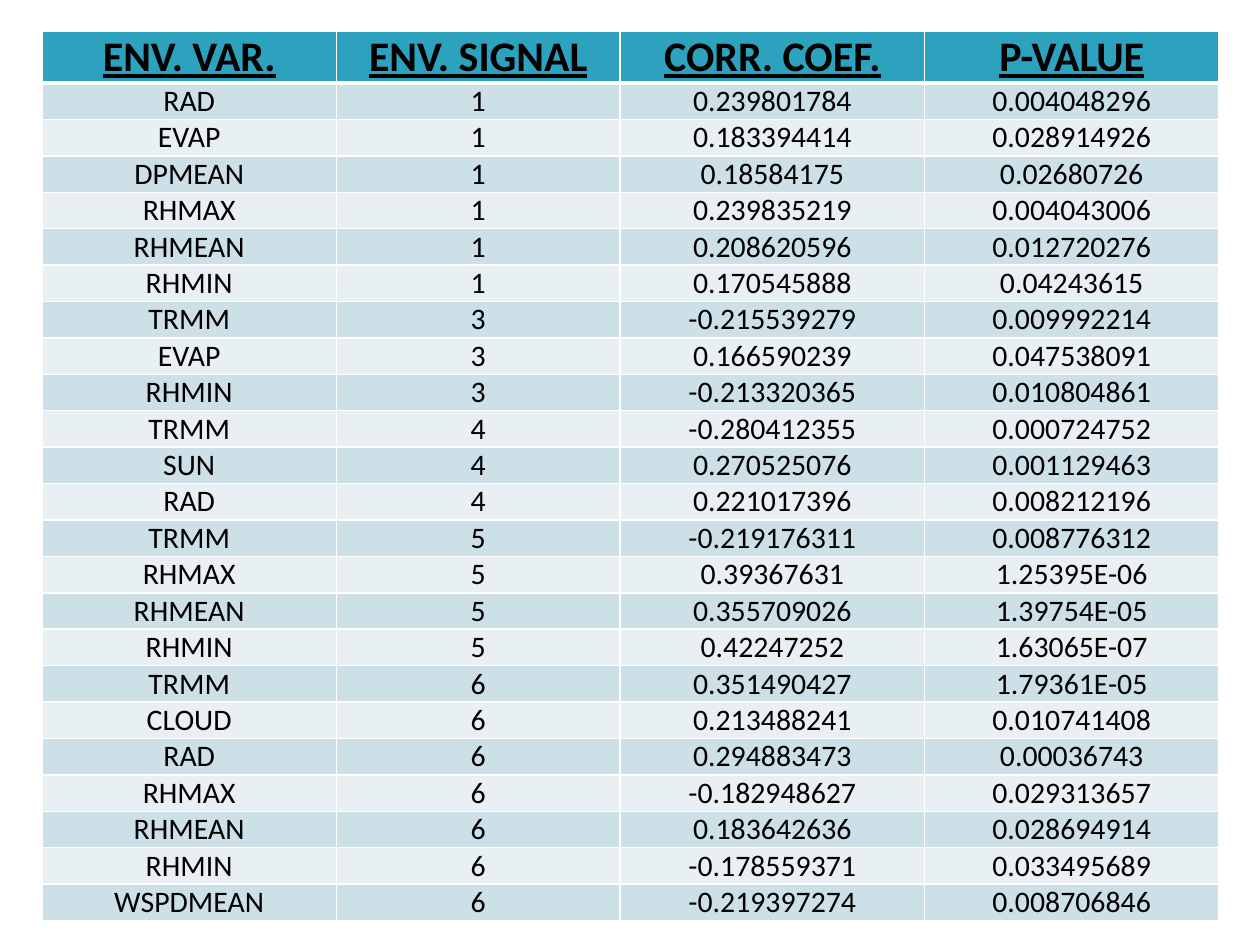
from typing import NamedTuple

from lxml.etree import SubElement
from pptx import Presentation
from pptx.dml.color import RGBColor
from pptx.enum.text import MSO_ANCHOR, PP_ALIGN
from pptx.oxml.ns import qn
from pptx.table import _Cell
from pptx.util import Cm, Pt

COLORS = {
    "header": "2DA2BF",
    "odd_row": "CDE0E8",
    "even_row": "E8F0F4",
    "border": "FFFFFF",
    "text": "000000",
}
FONT = "Calibri"
COLUMN_WIDTHS = (5.93, 5.72, 6.14, 5.93)
HEADER_HEIGHT = 0.85
ROW_HEIGHT = 0.72
THIN, THICK = 1, 3


class Correlation(NamedTuple):
    variable: str
    signal: str
    coefficient: str
    p_value: str


HEADINGS = Correlation("ENV. VAR.", "ENV. SIGNAL", "CORR. COEF.", "P-VALUE")
CORRELATIONS = [
    Correlation("RAD", "1", "0.239801784", "0.004048296"),
    Correlation("EVAP", "1", "0.183394414", "0.028914926"),
    Correlation("DPMEAN", "1", "0.18584175", "0.02680726"),
    Correlation("RHMAX", "1", "0.239835219", "0.004043006"),
    Correlation("RHMEAN", "1", "0.208620596", "0.012720276"),
    Correlation("RHMIN", "1", "0.170545888", "0.04243615"),
    Correlation("TRMM", "3", "-0.215539279", "0.009992214"),
    Correlation("EVAP", "3", "0.166590239", "0.047538091"),
    Correlation("RHMIN", "3", "-0.213320365", "0.010804861"),
    Correlation("TRMM", "4", "-0.280412355", "0.000724752"),
    Correlation("SUN", "4", "0.270525076", "0.001129463"),
    Correlation("RAD", "4", "0.221017396", "0.008212196"),
    Correlation("TRMM", "5", "-0.219176311", "0.008776312"),
    Correlation("RHMAX", "5", "0.39367631", "1.25395E-06"),
    Correlation("RHMEAN", "5", "0.355709026", "1.39754E-05"),
    Correlation("RHMIN", "5", "0.42247252", "1.63065E-07"),
    Correlation("TRMM", "6", "0.351490427", "1.79361E-05"),
    Correlation("CLOUD", "6", "0.213488241", "0.010741408"),
    Correlation("RAD", "6", "0.294883473", "0.00036743"),
    Correlation("RHMAX", "6", "-0.182948627", "0.029313657"),
    Correlation("RHMEAN", "6", "0.183642636", "0.028694914"),
    Correlation("RHMIN", "6", "-0.178559371", "0.033495689"),
    Correlation("WSPDMEAN", "6", "-0.219397274", "0.008706846"),
]


def write_text(cell: _Cell, text: str, *, size: float, bold: bool = False,
               underline: bool = False) -> None:
    cell.margin_left = cell.margin_right = cell.margin_top = cell.margin_bottom = 0
    cell.vertical_anchor = MSO_ANCHOR.BOTTOM
    paragraph = cell.text_frame.paragraphs[0]
    paragraph.alignment = PP_ALIGN.CENTER
    run = paragraph.add_run()
    run.text = text
    run.font.name = FONT
    run.font.size = Pt(size)
    run.font.bold = bold
    run.font.underline = underline
    run.font.color.rgb = RGBColor.from_string(COLORS["text"])


def draw_borders(cell: _Cell, *, top: float = THIN, bottom: float = THIN) -> None:
    properties = cell._tc.get_or_add_tcPr()
    widths = {"a:lnL": THIN, "a:lnR": THIN, "a:lnT": top, "a:lnB": bottom}
    for edge, width in widths.items():
        line = SubElement(properties, qn(edge), w=str(Pt(width)))
        fill = SubElement(line, qn("a:solidFill"))
        SubElement(fill, qn("a:srgbClr"), val=COLORS["border"])


def fill_cell(cell: _Cell, color: str) -> None:
    cell.fill.solid()
    cell.fill.fore_color.rgb = RGBColor.from_string(COLORS[color])


def main() -> None:
    presentation = Presentation()
    presentation.slide_width = Cm(25.4)
    presentation.slide_height = Cm(19.05)
    slide = presentation.slides.add_slide(presentation.slide_layouts[6])
    correlation_table = slide.shapes.add_table(
        len(CORRELATIONS) + 1, len(HEADINGS),
        Cm(0.85), Cm(0.64), Cm(sum(COLUMN_WIDTHS)), Cm(17.58),
    ).table

    for column, width in zip(correlation_table.columns, COLUMN_WIDTHS):
        column.width = Cm(width)
    for index, row in enumerate(correlation_table.rows):
        row.height = Cm(ROW_HEIGHT if index else HEADER_HEIGHT)

    for cell, heading in zip(correlation_table.rows[0].cells, HEADINGS):
        write_text(cell, heading, size=24, bold=True, underline=True)
        draw_borders(cell, bottom=THICK)
        fill_cell(cell, "header")

    for index, correlation in enumerate(CORRELATIONS, start=1):
        for cell, value in zip(correlation_table.rows[index].cells, correlation):
            write_text(cell, value, size=17)
            draw_borders(cell, top=THICK if index == 1 else THIN)
            fill_cell(cell, "odd_row" if index % 2 else "even_row")

    presentation.save("out.pptx")


if __name__ == "__main__":
    main()
